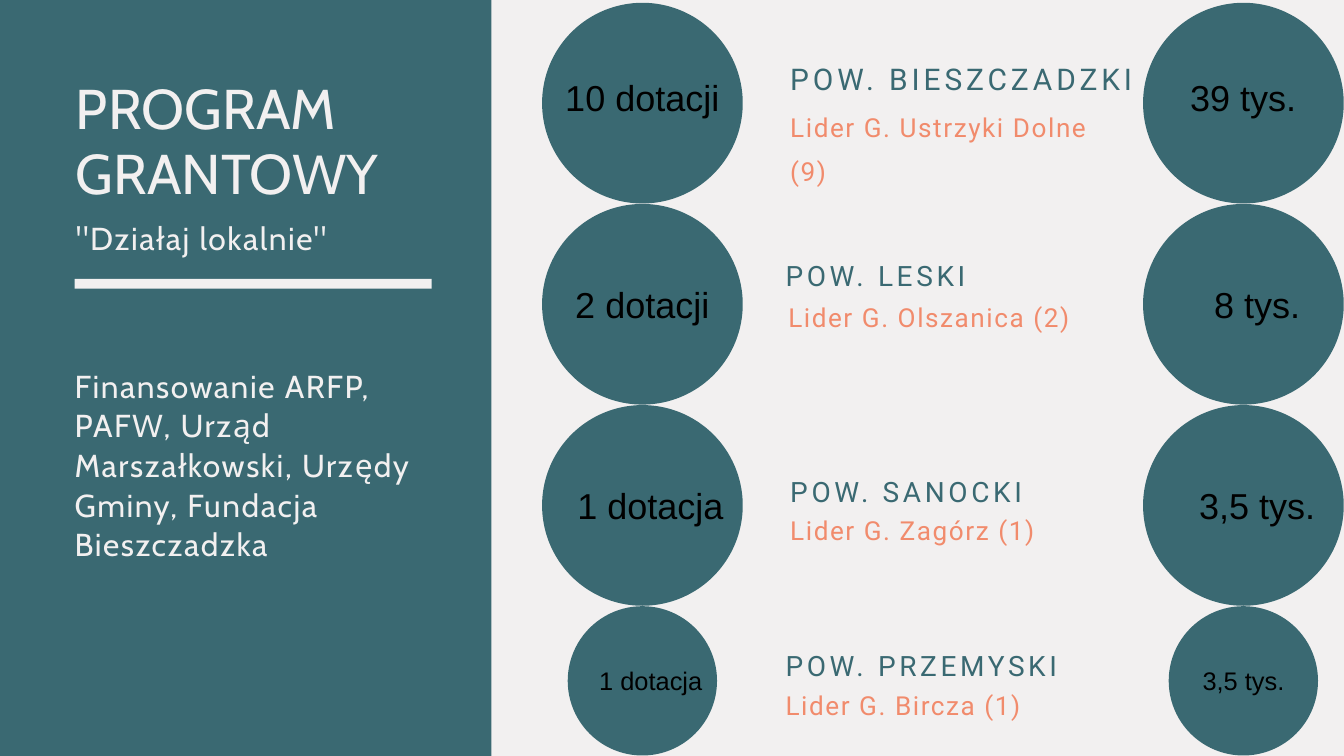
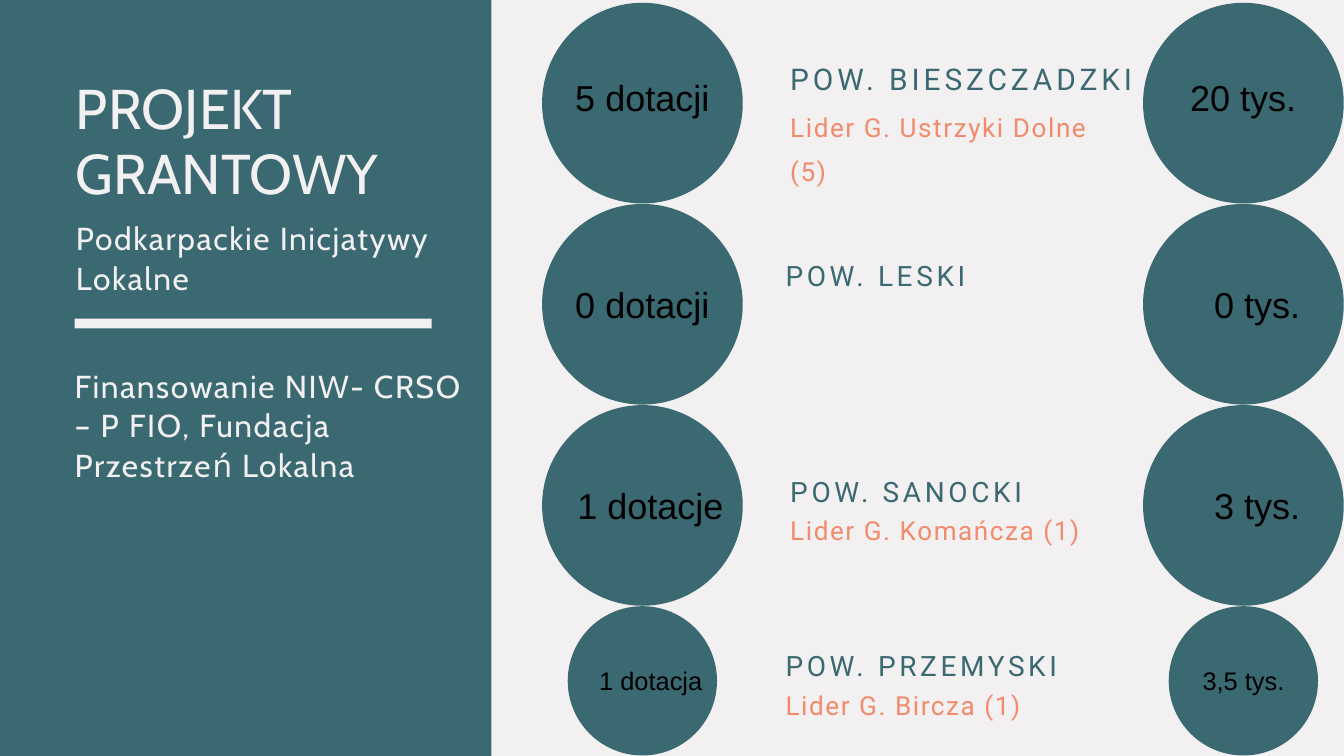
import pptx
import pptx.dml.color
import pptx.enum.shapes
import pptx.enum.text
import pptx.util

Pt = pptx.util.Pt
ALIGN = pptx.enum.text.PP_ALIGN
SHAPE = pptx.enum.shapes.MSO_SHAPE

# Shared colours
TEAL, PALE, CORAL, BLACK = "3A6972", "F2F0F0", "F18B6C", "000000"

# Text styles: font values, colour, line spacing, letter spacing, alignment
def style(name, size, color, line, spacing=0, align=ALIGN.LEFT):
    return {"font": {"name": name, "size": Pt(size)}, "color": color,
            "para": {"line_spacing": Pt(line), "alignment": align},
            "spacing": spacing}


TITLE = style("Cabin", 60, PALE, 69)
BODY = style("Cabin", 34, PALE, 42.5, 1.7)
COUNTY_FIRST = style("Roboto", 32, TEAL, 51.2, 4.2)
COUNTY = style("Roboto", 30, TEAL, 48, 3.9)
LEADER = style("Roboto", 28, CORAL, 47.6, 1.7)
FIGURE = style("Arial", 38.6, BLACK, 54.1, align=ALIGN.CENTER)
FIGURE_SMALL = style("Arial", 27.2, BLACK, 38, align=ALIGN.CENTER)

# Circle columns: two centres, touching circles stacked from the top
COUNT_X, AMOUNT_X = 688.3, 1332.2
CIRCLE_TOP, CIRCLE_STEP = 3, 215.5
BIG, SMALL = 215, 160

# Each row: county, its style, (left, top) of county and leader,
# circle size, figure style, top of figures, centres of count and amount
ROWS = [
    ("POW. BIESZCZADZKI", COUNTY_FIRST, (846.7, 52.6), (846.7, 105.1),
     BIG, FIGURE, 72.7, 688.3, 1332),
    ("POW. LESKI", COUNTY, (841.7, 265), (844.6, 308.9),
     BIG, FIGURE, 295.2, 688.3, 1347.1),
    ("POW. SANOCKI", COUNTY, (846.7, 496), (846.7, 537.1),
     BIG, FIGURE, 510.5, 697, 1347.1),
    ("POW. PRZEMYSKI", COUNTY, (841.7, 683.3), (841.7, 724.3),
     SMALL, FIGURE_SMALL, 707.3, 697.3, 1332.4),
]

SLIDES = [
    {"title": "PROGRAM GRANTOWY",
     "subtitle": '"Działaj lokalnie"', "subtitle_lines": 1,
     "funding": "Finansowanie ARFP, PAFW, Urząd Marszałkowski, "
                "Urzędy Gminy, Fundacja Bieszczadzka",
     "funding_lines": 5,
     "grants": [("10 dotacji", "Lider G. Ustrzyki Dolne (9)", "39 tys."),
                ("2 dotacji", "Lider G. Olszanica (2)", "8 tys."),
                ("1 dotacja", "Lider G. Zagórz (1)", "3,5 tys."),
                ("1 dotacja", "Lider G. Bircza (1)", "3,5 tys.")]},
    {"title": "PROJEKT GRANTOWY",
     "subtitle": "Podkarpackie Inicjatywy Lokalne", "subtitle_lines": 2,
     "funding": "Finansowanie NIW- CRSO – P FIO, Fundacja "
                "Przestrzeń Lokalna",
     "funding_lines": 3,
     "grants": [("5 dotacji", "Lider G. Ustrzyki Dolne (5)", "20 tys."),
                ("0 dotacji", None, "0 tys."),
                ("1 dotacje", "Lider G. Komańcza (1)", "3 tys."),
                ("1 dotacja", "Lider G. Bircza (1)", "3,5 tys.")]},
]


def rgb(color):
    return pptx.dml.color.RGBColor.from_string(color)


def apply(target, values):
    for name, value in values.items():
        setattr(target, name, value)


def write(sp, text, fmt):
    """Put one formatted paragraph into a shape without insets."""
    tf = sp.text_frame
    apply(tf, {"margin_left": 0, "margin_top": 0, "margin_right": 0,
               "margin_bottom": 0, "word_wrap": True,
               "auto_size": pptx.enum.text.MSO_AUTO_SIZE.NONE,
               "vertical_anchor": pptx.enum.text.MSO_ANCHOR.TOP})
    p = tf.paragraphs[0]
    apply(p, fmt["para"])
    r = p.add_run()
    r.text = text
    apply(r.font, fmt["font"])
    r.font.color.rgb = rgb(fmt["color"])
    if fmt["spacing"]:
        r._r.get_or_add_rPr().set("spc", str(round(fmt["spacing"] * 100)))


def add_text(s, text, fmt, left, top, width, height):
    sp = s.shapes.add_textbox(Pt(left), Pt(top), Pt(width), Pt(height))
    write(sp, text, fmt)


def add_figure(s, text, fmt, center, top):
    width = 347 if fmt is FIGURE else 244
    add_text(s, text, fmt, center - width / 2, top, width,
             fmt["para"]["line_spacing"].pt)


def add_block(s, kind, color, left, top, width, height):
    sp = s.shapes.add_shape(kind, Pt(left), Pt(top), Pt(width), Pt(height))
    sp.shadow.inherit = False
    sp.fill.solid()
    sp.fill.fore_color.rgb = rgb(color)
    sp.line.fill.background()
    return sp


def add_side_panel(s, content):
    # The panel goes behind the title
    panel = add_block(s, SHAPE.RECTANGLE, TEAL, -37.4, -35.3, 563.8, 910.8)
    s.shapes.element.insert(2, panel.element)

    title = s.shapes.title
    apply(title, {"left": Pt(81.4), "top": Pt(82.1),
                  "width": Pt(421), "height": Pt(140)})
    write(title, content["title"], TITLE)

    # The rule follows the last line of the subtitle
    extra = (content["subtitle_lines"] - 1) * 42.5
    add_text(s, content["subtitle"], BODY, 81.4, 232.6, 418, 42 + extra)
    add_block(s, SHAPE.RECTANGLE, PALE, 80, 298.8 + extra, 382.5, 10.6)
    add_text(s, content["funding"], BODY, 80, 391, 418,
             content["funding_lines"] * 42.5)


def add_grant_row(s, index, row, grant):
    (county, county_fmt, county_at, leader_at,
     size, fmt, top, count_center, amount_center) = row
    count, leader, amount = grant
    for center in (COUNT_X, AMOUNT_X):
        add_block(s, SHAPE.OVAL, TEAL, center - size / 2,
                  CIRCLE_TOP + index * CIRCLE_STEP, size, size)
    add_figure(s, count, fmt, count_center, top)
    add_figure(s, amount, fmt, amount_center, top)
    add_text(s, county, county_fmt, *county_at, 390, 44)
    if leader:
        add_text(s, leader, LEADER, *leader_at, 363, 42.5)


def main():
    prs = pptx.Presentation()
    apply(prs, {"slide_width": Pt(1440), "slide_height": Pt(810)})
    fill = prs.slide_master.background.fill
    fill.solid()
    fill.fore_color.rgb = rgb(PALE)

    for content in SLIDES:
        s = prs.slides.add_slide(prs.slide_layouts.get_by_name("Title Only"))
        add_side_panel(s, content)
        for i, (row, grant) in enumerate(zip(ROWS, content["grants"])):
            add_grant_row(s, i, row, grant)
    prs.save("out.pptx")


if __name__ == "__main__":
    main()
